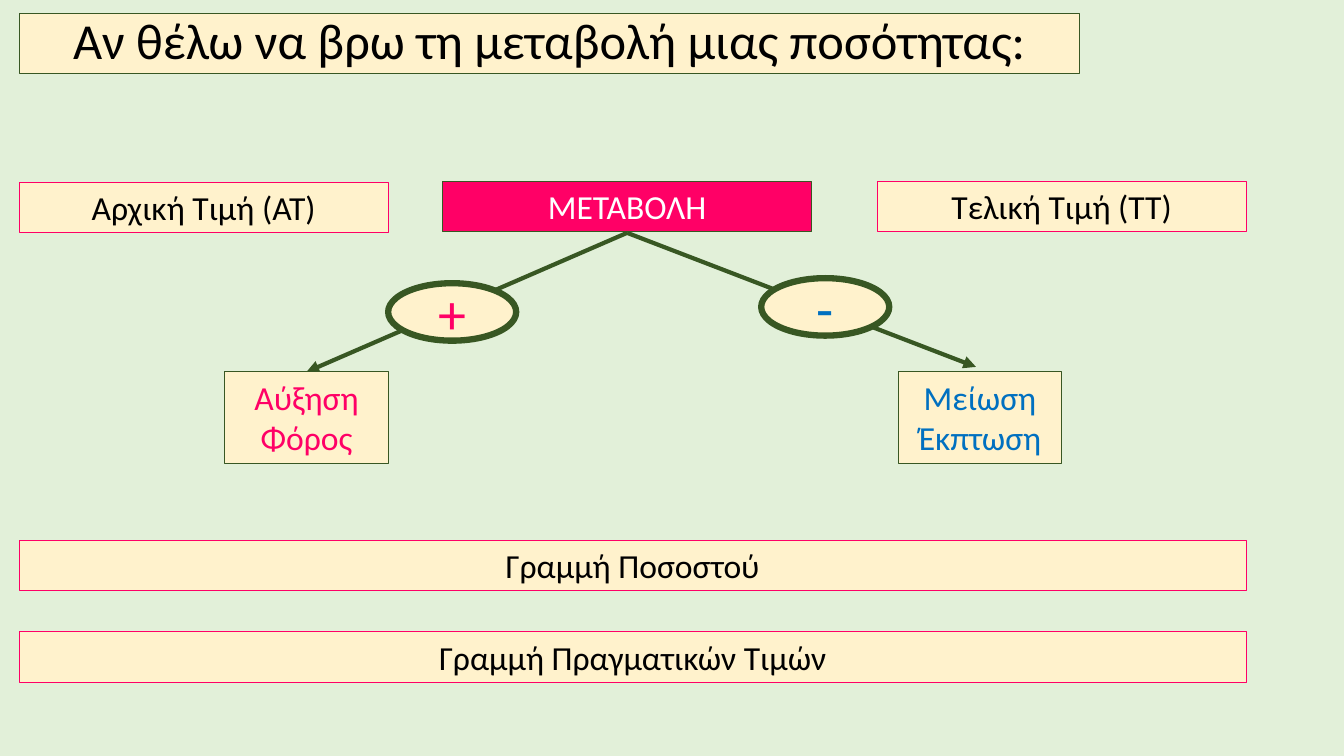
from lxml.etree import SubElement
from pptx import Presentation
from pptx.dml.color import RGBColor
from pptx.enum.shapes import MSO_CONNECTOR, MSO_SHAPE
from pptx.enum.text import MSO_ANCHOR, MSO_AUTO_SIZE, PP_ALIGN
from pptx.oxml.ns import qn
from pptx.util import Inches, Pt

COLORS = {
    "background": "E2F0D9",
    "cream": "FFF2CC",
    "pink": "FF0066",
    "green": "385723",
    "blue": "0070C0",
    "black": "000000",
    "white": "FFFFFF",
}


def rgb(name):
    """Return the palette colour with the given name."""
    return RGBColor.from_string(COLORS[name])


class ChangeSlide:
    """Hold the slide and its style, and draw each kind of element."""

    font = "Calibri"

    def __init__(self, prs):
        """Add a slide with a title and a plain background."""
        self.s = prs.slides.add_slide(prs.slide_layouts[5])
        self.s.background.fill.solid()
        self.s.background.fill.fore_color.rgb = rgb("background")

    def style(self, sp, text, size, color, fill, line, width):
        """Fill and outline a shape and set its centred text."""
        sp.fill.solid()
        sp.fill.fore_color.rgb = rgb(fill)
        sp.line.color.rgb = rgb(line)
        sp.line.width = Pt(width)
        tf = sp.text_frame
        tf.text = text
        tf.word_wrap = True
        for p in tf.paragraphs:
            p.alignment = PP_ALIGN.CENTER
            for r in p.runs:
                r.font.name = self.font
                r.font.size = Pt(size)
                r.font.color.rgb = rgb(color)

    def title(self, text, x, y, w, h):
        """Place and format the title placeholder."""
        sp = self.s.shapes.title
        sp.left, sp.top, sp.width, sp.height = map(Inches, (x, y, w, h))
        self.style(sp, text, 36, "black", "cream", "green", 0.75)
        tf = sp.text_frame
        tf.auto_size = MSO_AUTO_SIZE.NONE
        tf.vertical_anchor = MSO_ANCHOR.MIDDLE
        tf.paragraphs[0].line_spacing = 0.9

    def box(self, text, x, y, w, h=0.5, color="black", fill="cream", line="pink"):
        """Draw a labelled rectangle."""
        sp = self.s.shapes.add_shape(MSO_SHAPE.RECTANGLE, *map(Inches, (x, y, w, h)))
        sp.shadow.inherit = False
        self.style(sp, text, 24, color, fill, line, 0.75)
        sp.text_frame.vertical_anchor = MSO_ANCHOR.TOP
        sp.text_frame.auto_size = MSO_AUTO_SIZE.SHAPE_TO_FIT_TEXT

    def sign(self, text, x, y, color):
        """Draw an oval with a plus or minus sign."""
        sp = self.s.shapes.add_shape(MSO_SHAPE.OVAL, *map(Inches, (x, y, 1.27, 0.57)))
        sp.shadow.inherit = False
        self.style(sp, text, 40, color, "cream", "green", 4.5)
        sp.text_frame.vertical_anchor = MSO_ANCHOR.MIDDLE

    def arrow(self, x1, y1, x2, y2):
        """Draw a straight arrow between two points."""
        c = self.s.shapes.add_connector(
            MSO_CONNECTOR.STRAIGHT, *map(Inches, (x1, y1, x2, y2)))
        c.line.color.rgb = rgb("green")
        c.line.width = Pt(3)
        SubElement(c.line._get_or_add_ln(), qn("a:tailEnd"), type="triangle")
        SubElement(c._element.spPr, qn("a:effectLst"))


def main():
    """Build the slide and save it."""
    prs = Presentation()
    prs.slide_width, prs.slide_height = Inches(13.33), Inches(7.5)
    slide = ChangeSlide(prs)
    slide.title("Αν θέλω να βρω τη μεταβολή μιας ποσότητας:", 0.19, 0.13, 10.52, 0.6)

    slide.box("Αρχική Τιμή (ΑΤ)", 0.19, 1.81, 3.66)
    slide.box("ΜΕΤΑΒΟΛΗ", 4.39, 1.8, 3.66, color="white", fill="pink", line="green")
    slide.box("Τελική Τιμή (ΤΤ)", 8.7, 1.8, 3.66)

    branches = [
        ("+", "Αύξηση\nΦόρος", "pink", 2.23, (3.85, 2.81), (3.04, 3.69)),
        ("-", "Μείωση\nΈκπτωση", "blue", 8.91, (7.55, 2.76), (9.68, 3.64)),
    ]
    for sign, label, color, x, oval, tip in branches:
        slide.arrow(6.22, 2.31, *tip)
        slide.sign(sign, *oval, color)
        slide.box(label, x, 3.69, 1.62, 0.91, color=color, line="green")

    for text, y in [("Γραμμή Ποσοστού", 5.36), ("Γραμμή Πραγματικών Τιμών", 6.27)]:
        slide.box(text, 0.19, y, 12.17)
    prs.save("out.pptx")


if __name__ == "__main__":
    main()
